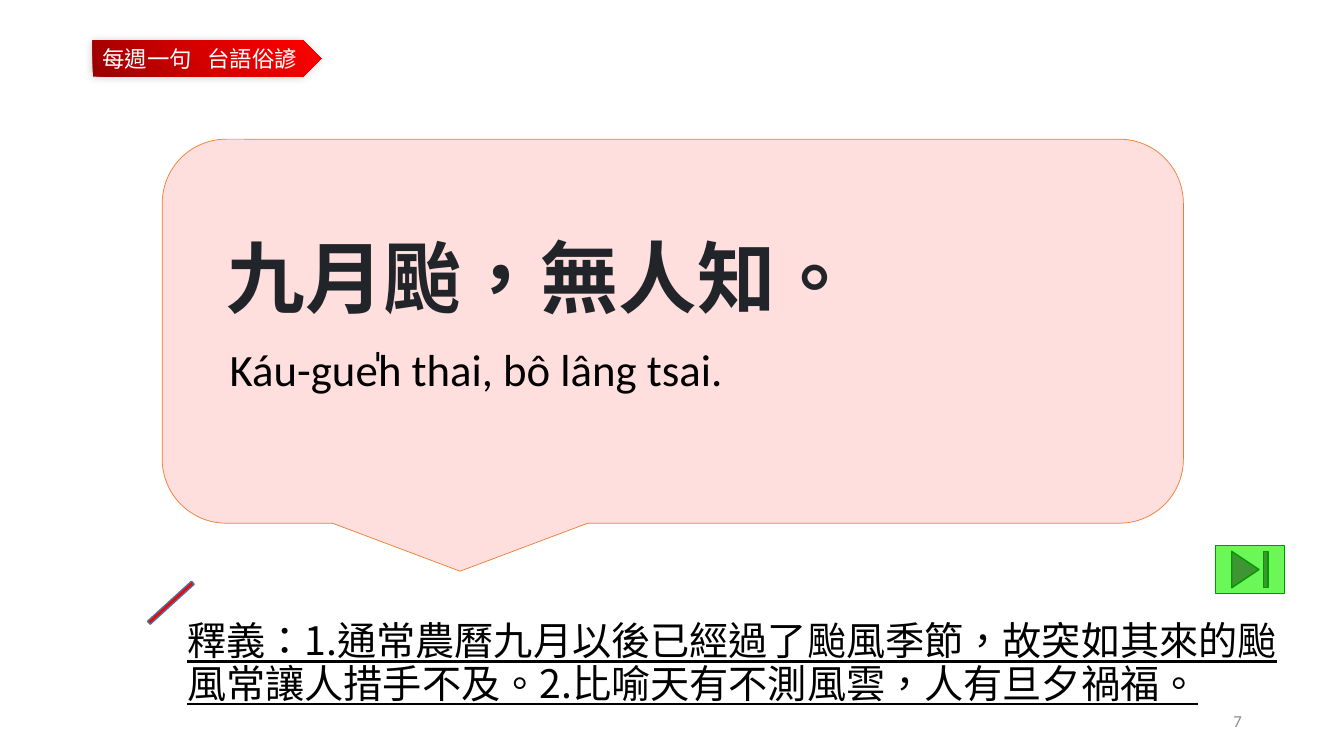
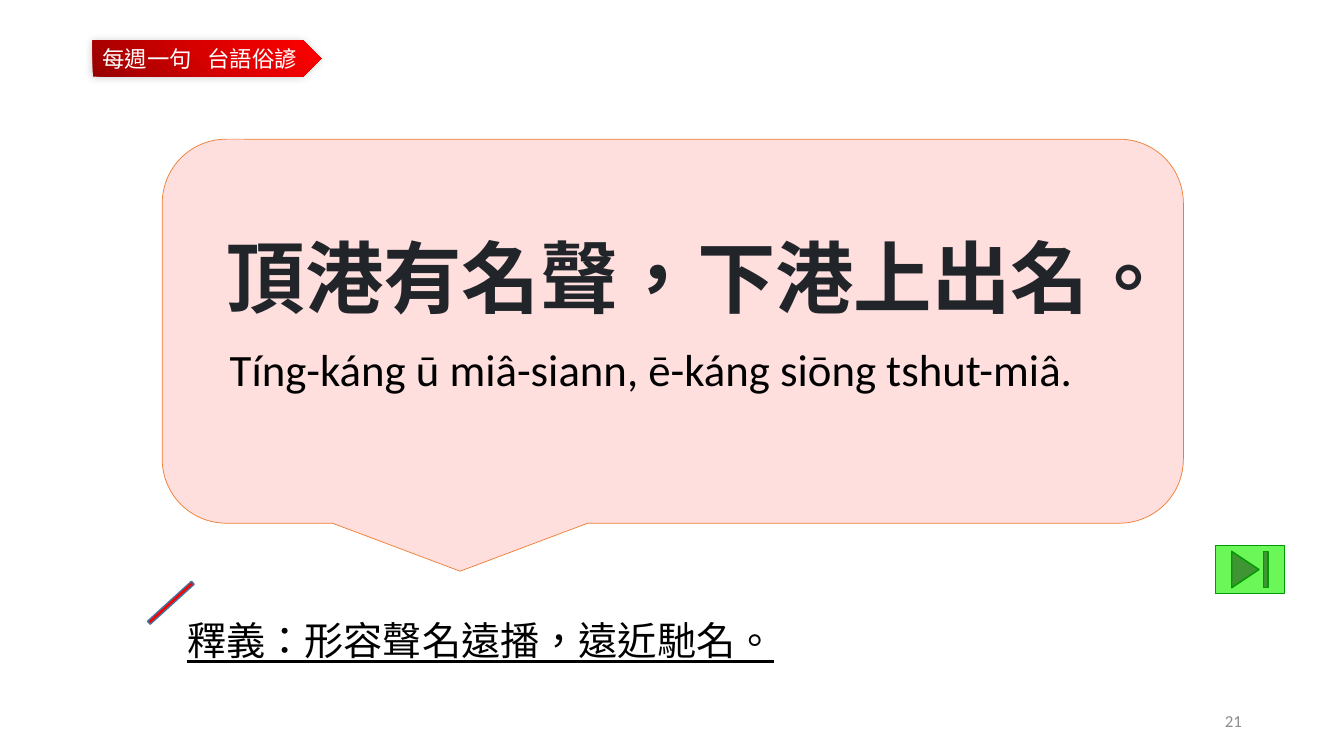
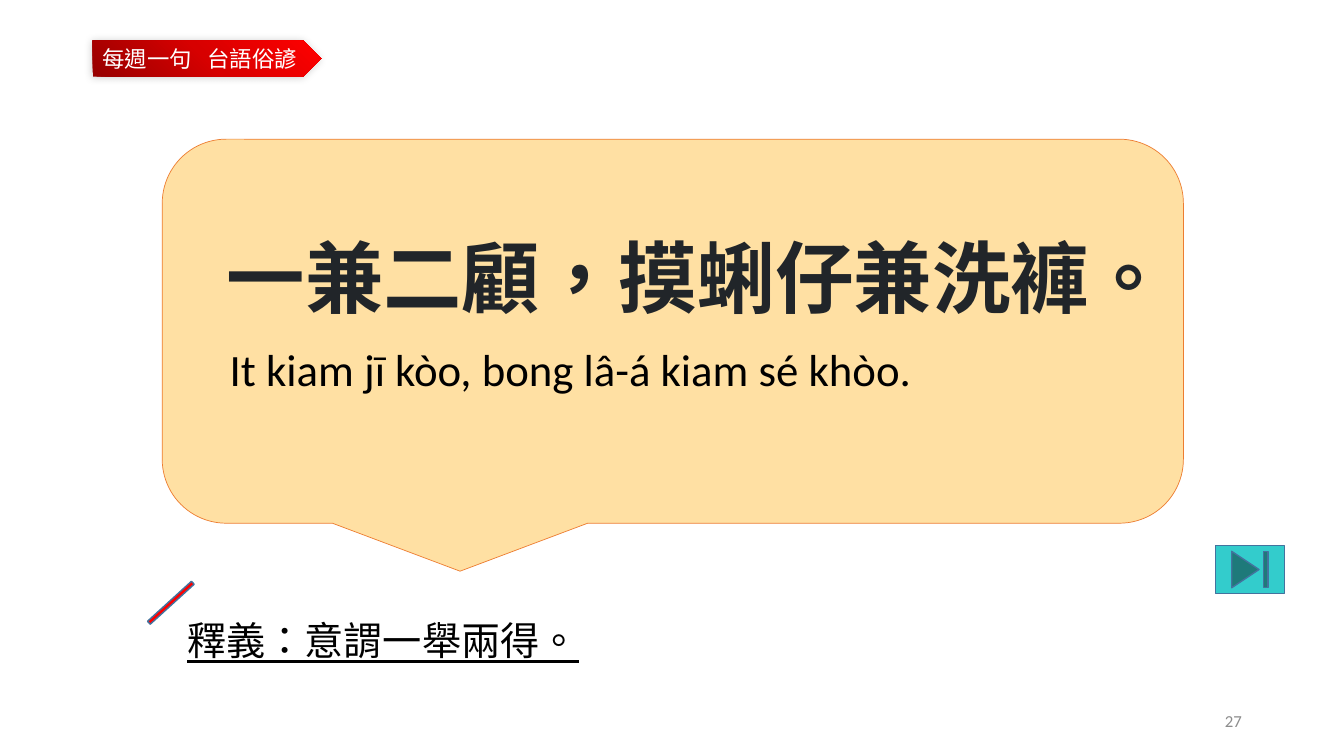
from lxml import etree
from pptx import Presentation
from pptx.dml.color import RGBColor
from pptx.enum.shapes import MSO_SHAPE as SHAPE
from pptx.enum.text import MSO_ANCHOR as ANCHOR, PP_ALIGN as ALIGN
from pptx.oxml import parse_xml
from pptx.oxml.ns import nsdecls, qn
from pptx.util import Pt

COLORS = {
    "red": "FF0000", "white": "FFFFFF", "black": "000000", "ink": "212529",
    "grey": "8C8C8C", "orange": "ED7D31", "blue": "43739E",
    "pink": "FFCCCC", "amber": "FFCC66",
    "lime": "6AF757", "green": "009900", "teal": "33CCCC",
}
BADGE_STOPS = [(0, "970000"), (50, "D70000"), (100, "FF0000")]
BADGE = "每週一句\t台語俗諺"
CJK = "Noto Sans CJK SC"

PINK = {"bubble": ("pink", 63), "button": ("lime", "green")}
AMBER = {"bubble": ("amber", 60), "button": ("teal", "blue")}

SAYINGS = [
    {"page": 7, "theme": PINK,
     "saying": "九月颱，無人知。",
     "sound": "Káu-gue̍h thai, bô lâng tsai.",
     "sense": "釋義：1.通常農曆九月以後已經過了颱風季節，故突如其來的颱風常讓人措手不及。"
              "2.比喻天有不測風雲，人有旦夕禍福。"},
    {"page": 21, "theme": PINK,
     "saying": "頂港有名聲，下港上出名。",
     "sound": "Tíng-káng ū miâ-siann, ē-káng siōng tshut-miâ.",
     "sense": "釋義：形容聲名遠播，遠近馳名。"},
    {"page": 27, "theme": AMBER,
     "saying": "一兼二顧，摸蜊仔兼洗褲。",
     "sound": "It kiam jī kòo, bong lâ-á kiam sé khòo.",
     "sense": "釋義：意謂一舉兩得。"},
]

# Left, top, width, height in points
PLACES = {
    "badge": (66.2, 28.8, 163.4, 25.9),
    "slash": (100.8, 429.1, 42.5, 2.9),
    "sense": (126.7, 440.6, 805, 85.7),
    "bubble": (115.9, 99.4, 729.4, 274.3),
    "saying": (154.8, 159.8, 776.9, 74.9),
    "sound": (157, 240.5, 774.7, 46.1),
    "page": (678.2, 500.4, 216, 28.8),
    "button": (868.3, 389.5, 49, 34.6),
}
STYLES = {
    "badge": {"size": Pt(16), "name": "Calibri", "color": "white"},
    "sense": {"size": Pt(28), "name": CJK, "color": "black", "underline": True},
    "saying": {"size": Pt(56), "name": "Calibri", "color": "ink", "bold": True},
    "sound": {"size": Pt(32), "name": "Calibri", "color": "black"},
    "page": {"size": Pt(12), "name": "Calibri", "color": "grey"},
}


def rgb(color):
    return RGBColor.from_string(COLORS[color])


def spot(part):
    return [Pt(n) for n in PLACES[part]]


def write(shape, part, text, anchor=ANCHOR.TOP, align=ALIGN.LEFT):
    frame = shape.text_frame
    frame.word_wrap = True
    frame.vertical_anchor = anchor
    para = frame.paragraphs[0]
    para.alignment = align
    run = para.add_run()
    run.text = text
    for key, value in STYLES[part].items():
        if key == "color":
            run.font.color.rgb = rgb(value)
        else:
            setattr(run.font, key, value)
    props = run.font._element
    props.set("lang", "zh-TW")
    latin = props.find(qn("a:latin"))
    latin.addnext(parse_xml(f'<a:ea {nsdecls("a")} typeface="{CJK}"/>'))
    return para


def add_text(slide, part, text, **layout):
    return write(slide.shapes.add_textbox(*spot(part)), part, text, **layout)


def add_form(slide, part, kind, fill=None, line=None, width=1):
    shape = slide.shapes.add_shape(kind, *spot(part))
    shape.shadow.inherit = False
    if fill:
        shape.fill.solid()
        shape.fill.fore_color.rgb = rgb(fill)
    if line:
        shape.line.color.rgb = rgb(line)
        shape.line.width = Pt(width)
    else:
        shape.line.fill.background()
    return shape


def add_badge(slide):
    shape = add_form(slide, "badge", SHAPE.PENTAGON)
    stops = "".join(f'<a:gs pos="{at * 1000}"><a:srgbClr val="{color}"/></a:gs>'
                    for at, color in BADGE_STOPS)
    props = shape._element.spPr
    props.find(qn("a:prstGeom")).addnext(parse_xml(
        f'<a:gradFill {nsdecls("a")}><a:gsLst>{stops}</a:gsLst>'
        f'<a:lin ang="{315 * 60000}" scaled="0"/></a:gradFill>'))
    glow = etree.SubElement(
        props.find(qn("a:effectLst")), qn("a:outerShdw"),
        blurRad=str(Pt(6)), dist=str(Pt(1)), dir=str(135 * 60000))
    color = etree.SubElement(glow, qn("a:srgbClr"), val=COLORS["black"])
    etree.SubElement(color, qn("a:alpha"), val="20000")
    para = write(shape, "badge", BADGE, anchor=ANCHOR.MIDDLE)
    para._p.get_or_add_pPr().append(parse_xml(
        f'<a:tabLst {nsdecls("a")}><a:tab pos="{Pt(75)}" algn="l"/></a:tabLst>'))


def add_bubble(slide, fill, alpha):
    shape = add_form(slide, "bubble", SHAPE.ROUNDED_RECTANGULAR_CALLOUT,
                     fill, "orange", 0.5)
    color = shape._element.spPr.find(qn("a:solidFill"))[0]
    etree.SubElement(color, qn("a:alpha"), val=str(alpha * 1000))


def add_saying(deck, item):
    slide = deck.slides.add_slide(deck.slide_layouts[6])
    theme = item["theme"]
    add_badge(slide)
    slash = add_form(slide, "slash", SHAPE.RECTANGLE, "red", "blue")
    slash.rotation = 317.7
    add_text(slide, "sense", item["sense"]).line_spacing = 0.9
    add_bubble(slide, *theme["bubble"])
    for part in ("saying", "sound"):
        add_text(slide, part, item[part])
    add_text(slide, "page", str(item["page"]),
             anchor=ANCHOR.MIDDLE, align=ALIGN.RIGHT)
    add_form(slide, "button", SHAPE.ACTION_BUTTON_END, *theme["button"])


def main():
    deck = Presentation()
    deck.slide_width, deck.slide_height = Pt(960), Pt(540)
    for item in SAYINGS:
        add_saying(deck, item)
    deck.save("out.pptx")


if __name__ == "__main__":
    main()
